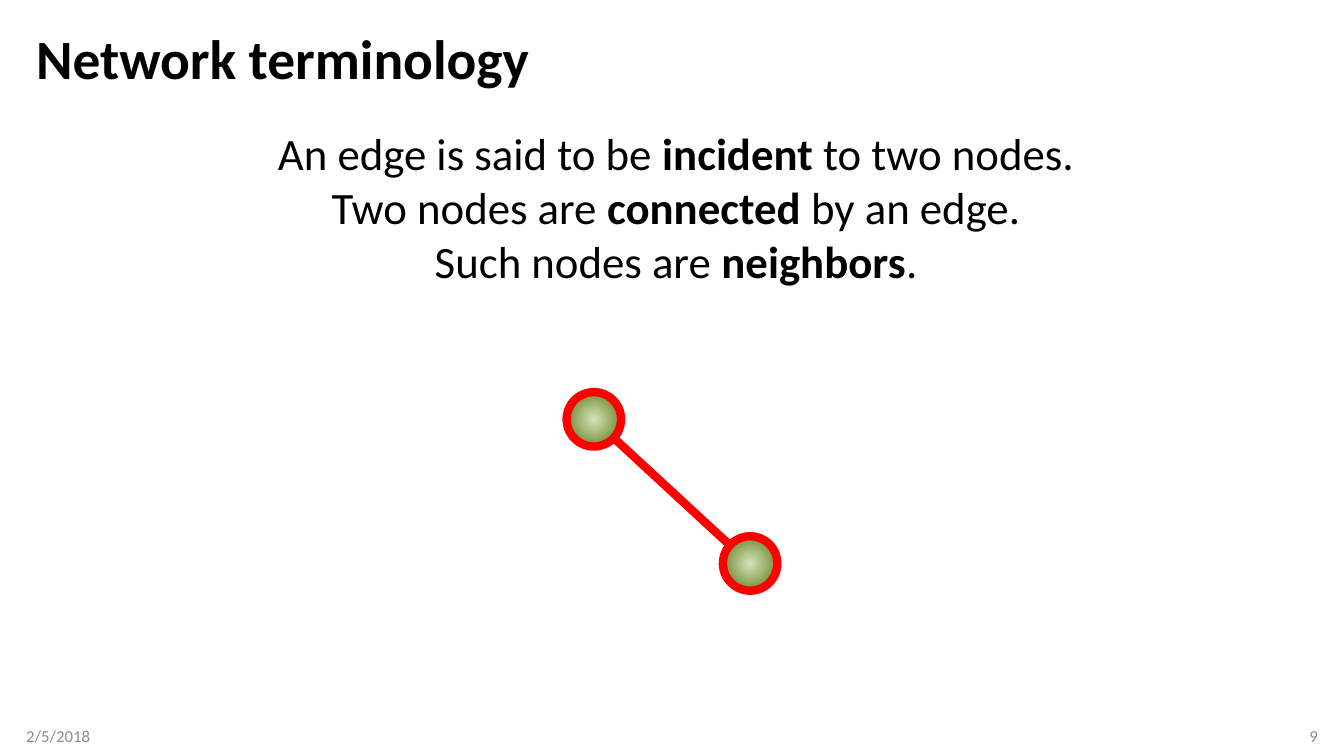
"""Build the network terminology slide."""
from lxml.etree import SubElement
from pptx import Presentation
from pptx.dml.color import RGBColor
from pptx.enum.shapes import MSO_CONNECTOR, MSO_SHAPE
from pptx.enum.text import MSO_ANCHOR, PP_ALIGN
from pptx.oxml.ns import qn
from pptx.util import Inches, Pt

BLACK = RGBColor(0x00, 0x00, 0x00)
GRAY = RGBColor(0x8C, 0x8C, 0x8C)
RED = RGBColor(0xFF, 0x00, 0x00)
PALE = RGBColor(0xD7, 0xE4, 0xBD)
GREEN = RGBColor(0x77, 0x93, 0x3C)

FONT = "Calibri"
TITLE = [[("Network terminology", True)]]
DATE = [[("2/5/2018", False)]]
PAGE = [[("9", False)]]
TERMS = [
    [("An edge is said to be ", False), ("incident", True), (" to two nodes.", False)],
    [("Two nodes are ", False), ("connected", True), (" by an edge.", False)],
    [("Such nodes are ", False), ("neighbors", True), (".", False)],
]
NODES = [(5.89, 4.16), (7.44, 5.59)]
EDGE = [(5.8, 4.08), (7.49, 5.64)]
SIZE = 0.54
STROKE = Pt(6)


def add_text(slide, area, lines, size, color=BLACK, align=PP_ALIGN.LEFT,
             anchor=MSO_ANCHOR.MIDDLE, left=0.1, right=0.1, space=1.0):
    box = slide.shapes.add_textbox(*map(Inches, area))
    frame = box.text_frame
    frame.word_wrap = True
    frame.vertical_anchor = anchor
    frame.margin_left, frame.margin_right = Inches(left), Inches(right)
    for i, line in enumerate(lines):
        para = frame.add_paragraph() if i else frame.paragraphs[0]
        para.alignment = align
        para.line_spacing = space
        for text, bold in line:
            run = para.add_run()
            run.text = text
            font = run.font
            font.name, font.size, font.bold = FONT, Pt(size), bold
            font.color.rgb = color


def add_edge(slide):
    ends = [Inches(n) for point in EDGE for n in point]
    edge = slide.shapes.add_connector(MSO_CONNECTOR.STRAIGHT, *ends)
    edge.line.color.rgb = RED
    edge.line.width = STROKE
    SubElement(edge._element.spPr, qn("a:effectLst"))


def add_node(slide, x, y):
    area = (x - SIZE / 2, y - SIZE / 2, SIZE, SIZE)
    node = slide.shapes.add_shape(MSO_SHAPE.OVAL, *map(Inches, area))
    node.shadow.inherit = False
    node.rotation = 327.4
    node.line.color.rgb = RED
    node.line.width = STROKE
    node.fill.gradient()
    for stop, color, place in zip(node.fill.gradient_stops, (PALE, GREEN), (0, 0.5)):
        stop.color.rgb = color
        stop.position = place
    grad = node._element.spPr.find(qn("a:gradFill"))
    grad.remove(grad.find(qn("a:lin")))
    round_fill = SubElement(grad, qn("a:path"), {"path": "circle"})
    SubElement(round_fill, qn("a:fillToRect"), dict.fromkeys("ltrb", "50000"))


def main():
    deck = Presentation()
    deck.slide_width, deck.slide_height = Inches(13.33), Inches(7.5)
    slide = deck.slides.add_slide(deck.slide_layouts[6])
    add_text(slide, (0.26, 0.25, 12.81, 0.72), TITLE, 39.6, space=0.9)
    add_text(slide, (0.26, 7.1, 3, 0.4), DATE, 12, GRAY, left=0)
    add_text(slide, (10.07, 7.1, 3, 0.4), PAGE, 12, GRAY, PP_ALIGN.RIGHT, right=0)
    add_edge(slide)
    for x, y in NODES:
        add_node(slide, x, y)
    add_text(slide, (0.67, 1.2, 12.07, 1.72), TERMS, 32,
             align=PP_ALIGN.CENTER, anchor=MSO_ANCHOR.TOP)
    deck.save("out.pptx")


if __name__ == "__main__":
    main()
